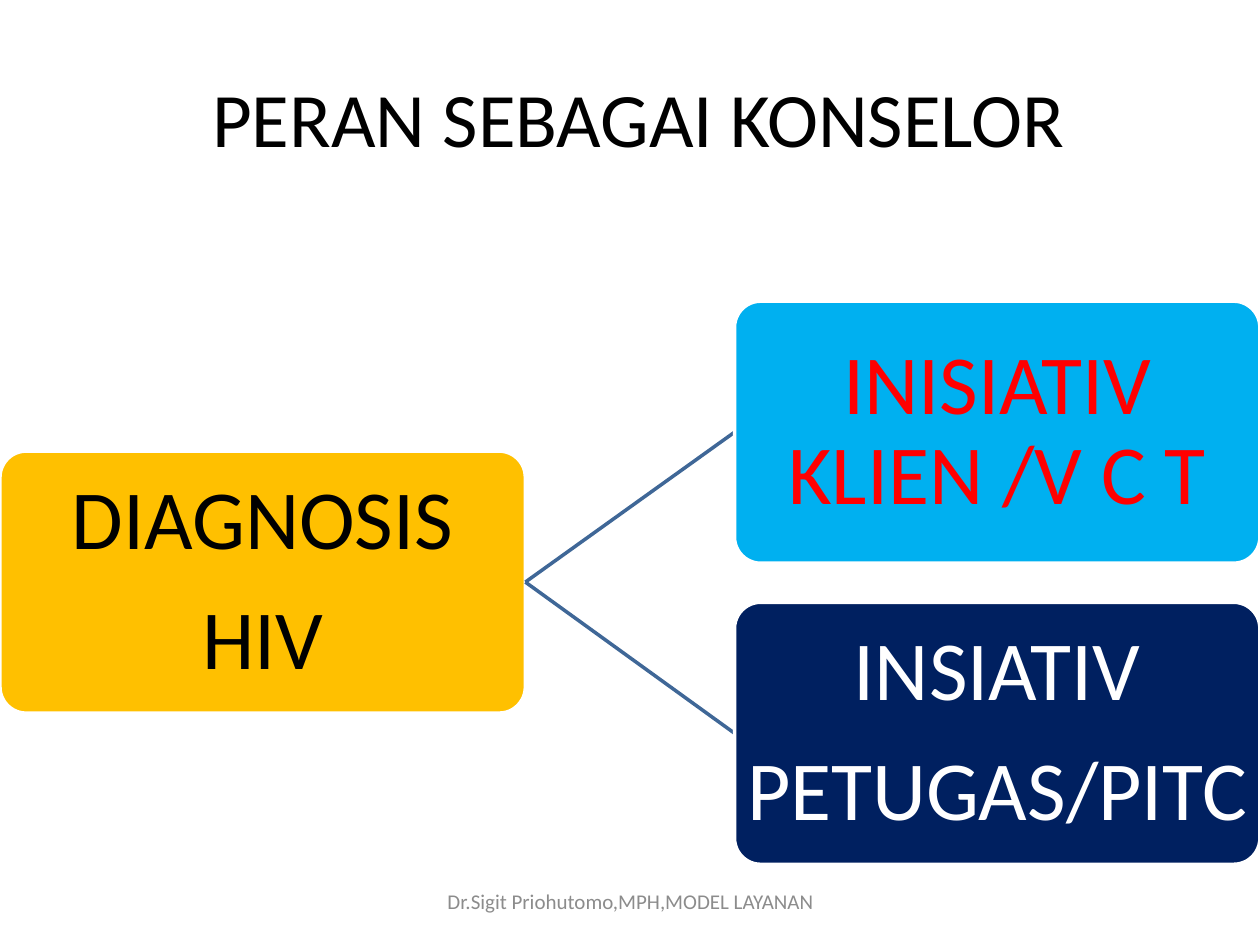
from dataclasses import dataclass

from lxml import etree
from pptx import Presentation
from pptx.dml.color import RGBColor
from pptx.enum.shapes import MSO_CONNECTOR, MSO_SHAPE
from pptx.enum.text import MSO_ANCHOR, PP_ALIGN
from pptx.oxml.ns import qn
from pptx.util import Inches, Pt


@dataclass(frozen=True)
class Theme:
    font: str = "Calibri"
    black: str = "000000"
    white: str = "FFFFFF"
    red: str = "FF0000"
    gray: str = "8C8C8C"
    amber: str = "FFC000"
    sky: str = "00B0F0"
    navy: str = "002060"
    link: str = "3F6797"
    title: int = 44
    box: int = 48
    footer: int = 12


theme = Theme()


def set_text(sp, lines, size, color, inset=None, spacing=None, after=None):
    """Fill a shape with centred paragraphs, anchored in the middle."""
    tf = sp.text_frame
    tf.word_wrap = True
    tf.vertical_anchor = MSO_ANCHOR.MIDDLE
    if inset is not None:
        tf.margin_left = tf.margin_right = Inches(inset)
        tf.margin_top = tf.margin_bottom = Inches(inset)
    for i, line in enumerate(lines):
        p = tf.paragraphs[0] if i == 0 else tf.add_paragraph()
        p.alignment = PP_ALIGN.CENTER
        if spacing is not None:
            p.line_spacing = spacing
        if after is not None:
            p.space_after = Pt(after)
        r = p.add_run()
        r.text = line
        r.font.name = theme.font
        r.font.size = Pt(size)
        r.font.color.rgb = RGBColor.from_string(color)


def add_box(left, top, lines, fill, color):
    sp = s.shapes.add_shape(MSO_SHAPE.ROUNDED_RECTANGLE, Inches(left),
                            Inches(top), Inches(BOX_W), Inches(BOX_H))
    sp.adjustments[0] = 0.1
    sp.shadow.inherit = False
    sp.fill.solid()
    sp.fill.fore_color.rgb = RGBColor.from_string(fill)
    sp.line.color.rgb = RGBColor.from_string(theme.white)
    sp.line.width = Pt(2)
    set_text(sp, lines, theme.box, color, inset=0.03, spacing=0.9,
             after=0.35 * theme.box)
    return sp


prs = Presentation()
prs.slide_width, prs.slide_height = Inches(10), Inches(7.5)
s = prs.slides.add_slide(prs.slide_layouts[5])

title = s.shapes.title
title.left, title.top = Inches(0.97), Inches(0.3)
title.width, title.height = Inches(8.2), Inches(1.25)
set_text(title, ["PERAN SEBAGAI KONSELOR"], theme.title, theme.black)

footer = s.shapes.add_textbox(Inches(3.42), Inches(6.95), Inches(3.17), Inches(0.4))
set_text(footer, ["Dr.Sigit Priohutomo,MPH,MODEL LAYANAN"], theme.footer, theme.gray)

# Diagnosis on the left, branching to two initiatives on the right
BOX_W, BOX_H = 4.17, 2.08
ROOT_TOP, BRANCH_LEFT = 3.58, 5.83
BRANCH_TOP, BRANCH_STEP = 2.39, 2.39
branches = [
    (["INISIATIV KLIEN /V C T"], theme.sky, theme.red),
    (["INSIATIV", "PETUGAS/PITC"], theme.navy, theme.white),
]

diagnosis = add_box(0, ROOT_TOP, ["DIAGNOSIS", "HIV"], theme.amber, theme.black)
for i, (lines, fill, color) in enumerate(branches):
    top = BRANCH_TOP + i * BRANCH_STEP
    # The line comes before its branch box, so that it lies behind it
    link = s.shapes.add_connector(
        MSO_CONNECTOR.STRAIGHT, Inches(BOX_W), Inches(ROOT_TOP + BOX_H / 2),
        Inches(BRANCH_LEFT), Inches(top + BOX_H / 2))
    link.line.color.rgb = RGBColor.from_string(theme.link)
    link.line.width = Pt(2)
    etree.SubElement(link.element.spPr, qn("a:effectLst"))
    branch = add_box(BRANCH_LEFT, top, lines, fill, color)
    link.begin_connect(diagnosis, 3)
    link.end_connect(branch, 1)

prs.save("out.pptx")
